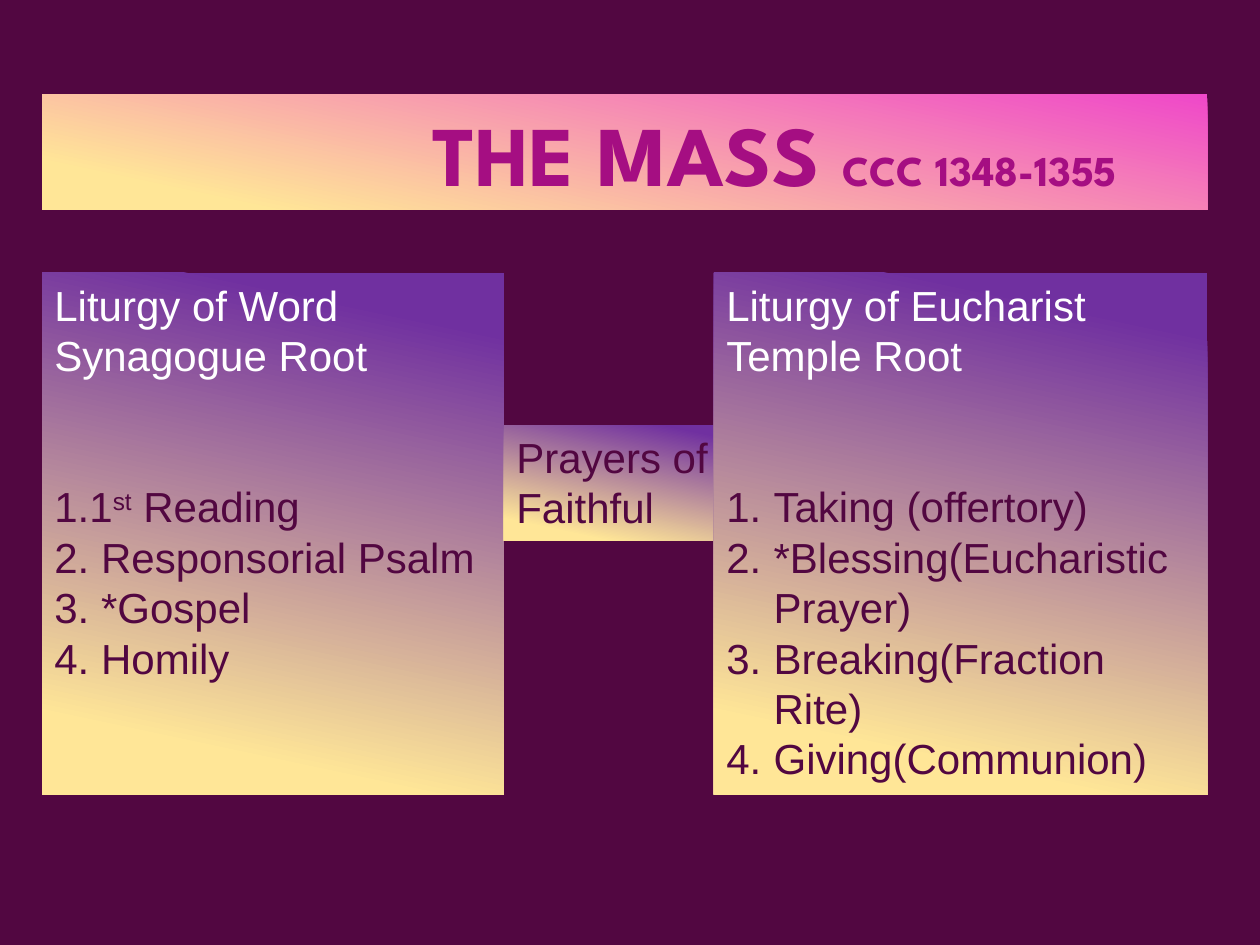
from pptx import Presentation
from pptx.dml.color import RGBColor
from pptx.enum.shapes import MSO_SHAPE
from pptx.enum.text import MSO_ANCHOR, PP_ALIGN
from pptx.oxml.ns import qn
from pptx.util import Pt
from lxml.etree import SubElement

PLUM, PURPLE, PINK, MAGENTA = "520741", "7030A0", "EF48C9", "A50E82"
CREAM, WHITE = "FFE697", "FFFFFF"
LINE_HEIGHT = 28.8
PANEL_TOP, PANEL_HEIGHT = 156, 298


def color(hex_string):
    return RGBColor.from_string(hex_string)


def add_gradient_box(slide, left, top, width, height, start, start_position):
    """Add a borderless rectangle that fades from the start colour to cream."""
    shape = slide.shapes.add_shape(
        MSO_SHAPE.RECTANGLE, Pt(left), Pt(top), Pt(width), Pt(height))
    shape.shadow.inherit = False
    shape.line.fill.background()
    shape.fill.gradient()
    shape.fill.gradient_angle = 258
    stops = zip(shape.fill.gradient_stops, (start, CREAM), (start_position, 0.87))
    for stop, hex_string, position in stops:
        stop.color.rgb = color(hex_string)
        stop.position = position
    shape.text_frame.word_wrap = True
    shape.text_frame.vertical_anchor = MSO_ANCHOR.TOP
    return shape


def number_paragraph(paragraph):
    properties = paragraph._p.get_or_add_pPr()
    properties.set("marL", str(Pt(27)))
    properties.set("indent", str(-Pt(27)))
    SubElement(properties, qn("a:buFont"), typeface="+mj-lt")
    SubElement(properties, qn("a:buAutoNum"), type="arabicPeriod")


def format_paragraph(paragraph, hex_string):
    paragraph.alignment = PP_ALIGN.LEFT
    paragraph.line_spacing = Pt(LINE_HEIGHT)
    paragraph.font.name = "Arial"
    paragraph.font.size = Pt(24)
    paragraph.font.color.rgb = color(hex_string)


def add_title(slide):
    shape = add_gradient_box(slide, 24, 54, 666, 66, PINK, 0)
    frame = shape.text_frame
    frame.vertical_anchor = MSO_ANCHOR.MIDDLE
    frame.margin_left = Pt(223)
    paragraph = frame.paragraphs[0]
    paragraph.alignment = PP_ALIGN.LEFT
    paragraph.font.name = "League Spartan"
    paragraph.font.bold = True
    paragraph.font.color.rgb = color(MAGENTA)
    for text, size in (("THE MASS ", 48.6), ("CCC 1348-1355", 24.3)):
        run = paragraph.add_run()
        run.text = text
        run.font.size = Pt(size)


def add_panel(slide, left, width, headings, items, numbered=False):
    """Add a liturgy panel; each item is a list of (text, is_superscript) runs."""
    shape = add_gradient_box(
        slide, left, PANEL_TOP, width, PANEL_HEIGHT, PURPLE, 0.1)
    frame = shape.text_frame
    frame.text = "\n".join(headings)
    for paragraph in frame.paragraphs:
        format_paragraph(paragraph, WHITE)
    for index, runs in enumerate(items):
        paragraph = frame.add_paragraph()
        if numbered:
            number_paragraph(paragraph)
        if index == 0:
            paragraph.space_before = Pt(2 * LINE_HEIGHT)
        format_paragraph(paragraph, PLUM)
        for text, is_superscript in runs:
            run = paragraph.add_run()
            run.text = text
            if is_superscript:
                run.font._element.set("baseline", "30000")


def add_prayers(slide):
    shape = add_gradient_box(slide, 288, 243, 138, 66, PURPLE, 0.1)
    shape.text_frame.text = "Prayers of Faithful"
    format_paragraph(shape.text_frame.paragraphs[0], PLUM)


def plain(*texts):
    return [[(text, False)] for text in texts]


def main():
    presentation = Presentation()
    presentation.slide_width, presentation.slide_height = Pt(720), Pt(540)
    slide = presentation.slides.add_slide(presentation.slide_layouts[6])
    slide.background.fill.solid()
    slide.background.fill.fore_color.rgb = color(PLUM)

    add_title(slide)
    first_reading = [("1.1", False), ("st", True), (" Reading", False)]
    add_panel(slide, 24, 264, ("Liturgy of Word", "Synagogue Root"),
              [first_reading,
               *plain("2. Responsorial Psalm", "3. *Gospel", "4. Homily")])
    add_prayers(slide)
    add_panel(slide, 408, 282, ("Liturgy of Eucharist", "Temple Root"),
              plain("Taking (offertory)", "*Blessing(Eucharistic Prayer)",
                    "Breaking(Fraction Rite)", "Giving(Communion)"),
              numbered=True)
    presentation.save("out.pptx")


if __name__ == "__main__":
    main()
